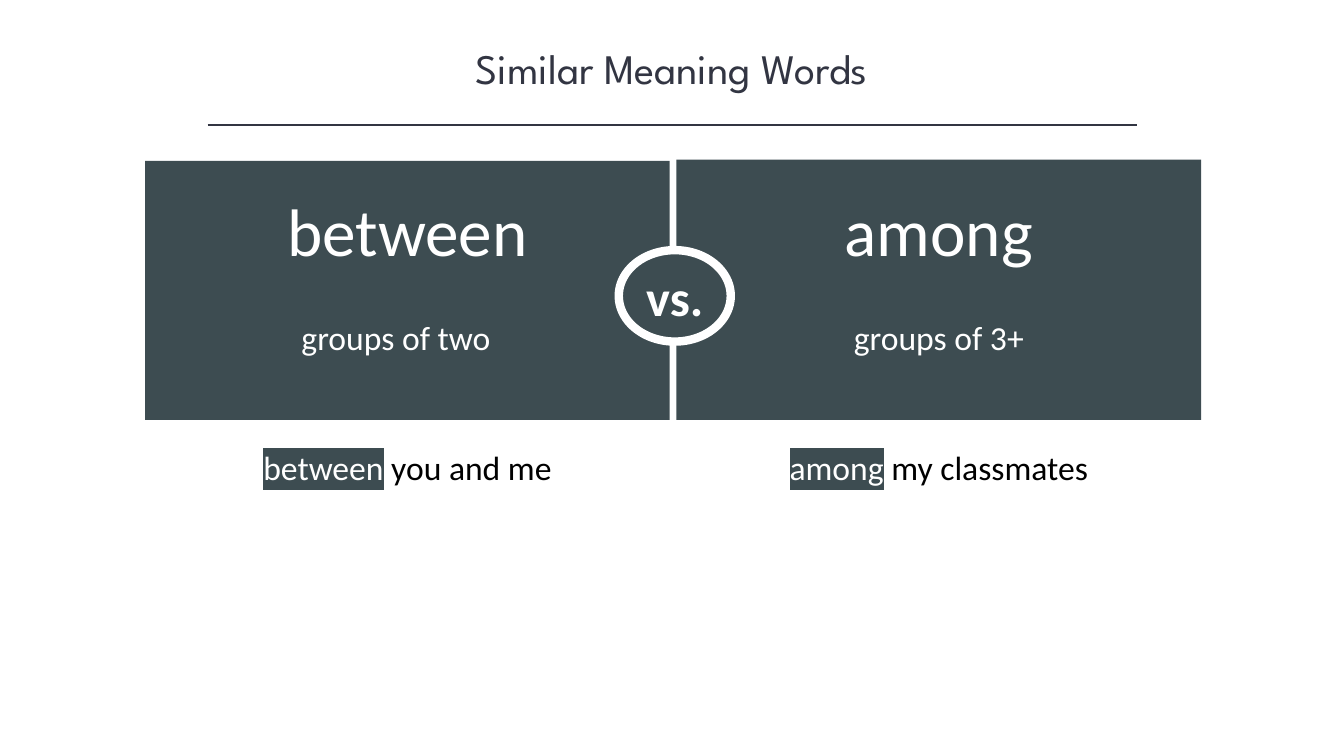
from lxml import etree
from pptx import Presentation
from pptx.dml.color import RGBColor
from pptx.enum.shapes import MSO_CONNECTOR, MSO_SHAPE
from pptx.enum.text import MSO_ANCHOR, MSO_AUTO_SIZE, PP_ALIGN
from pptx.oxml.ns import qn
from pptx.util import Pt

COLORS = {"slate": "3D4C51", "ink": "323542", "white": "FFFFFF", "black": "000000"}
BODY_FONT = "Calibri"
TITLE_FONT = "League Spartan"


def rgb(name):
    return RGBColor.from_string(COLORS[name])


def style_run(run, size, color, font=BODY_FONT, bold=False):
    run.font.size = Pt(size)
    run.font.name = font
    run.font.bold = bold
    run.font.color.rgb = rgb(color)


def highlight(run, color):
    """Mark a run that already has its font colour."""
    mark = etree.Element(qn("a:highlight"))
    etree.SubElement(mark, qn("a:srgbClr"), val=COLORS[color])
    run.font.fill  # the colour fill must precede the highlight
    run._r.rPr.find(qn("a:solidFill")).addnext(mark)


def add_label(slide, box, text, size, color="white", anchor=MSO_ANCHOR.TOP):
    """Add one centred line of text and return its paragraph."""
    label = slide.shapes.add_textbox(*map(Pt, box)).text_frame
    label.word_wrap = True
    label.vertical_anchor = anchor
    line = label.paragraphs[0]
    line.text = text
    line.alignment = PP_ALIGN.CENTER
    style_run(line.runs[0], size, color)
    return line


def add_block(slide, preset, box):
    block = slide.shapes.add_shape(preset, *map(Pt, box))
    block.shadow.inherit = False
    block.fill.solid()
    block.fill.fore_color.rgb = rgb("slate")
    block.line.fill.background()
    return block


def add_heading(slide, box, text):
    """Set the title with a thin rule beneath it."""
    left, top, width, height = box
    title = slide.shapes.title
    title.left, title.top, title.width, title.height = map(Pt, box)
    frame = title.text_frame
    frame.text = text
    frame.auto_size = MSO_AUTO_SIZE.NONE
    frame.vertical_anchor = MSO_ANCHOR.TOP
    frame.paragraphs[0].alignment = PP_ALIGN.CENTER
    style_run(frame.paragraphs[0].runs[0], 30, "ink", TITLE_FONT)

    rule_y = top + 62.7
    rule = slide.shapes.add_connector(
        MSO_CONNECTOR.STRAIGHT,
        Pt(left + 28.3), Pt(rule_y), Pt(left + width - 27.8), Pt(rule_y))
    rule.line.color.rgb = rgb("ink")
    rule.line.width = Pt(1)
    etree.SubElement(rule._element.spPr, qn("a:effectLst"))


def add_word_panel(slide, box, word, meaning, example_rest, meaning_shift=0):
    """Add a panel with a word and its meaning, and an example below it."""
    left, top, width, height = box
    bottom = top + height
    add_block(slide, MSO_SHAPE.RECTANGLE, box)
    add_label(slide, (left, bottom - 168, width, 65.5), word, 48)
    add_label(slide, (left + meaning_shift, bottom - 77.2, width, 36),
              meaning, 24, anchor=MSO_ANCHOR.MIDDLE)

    example = add_label(slide, (left, bottom + 15.7, width, 36), word, 24)
    highlight(example.runs[0], "slate")
    rest = example.add_run()
    rest.text = example_rest
    style_run(rest, 24, "black")


def add_versus_badge(slide, box):
    badge = add_block(slide, MSO_SHAPE.OVAL, box)
    badge.line.color.rgb = rgb("white")
    badge.line.width = Pt(6)
    frame = badge.text_frame
    frame.text = "vs."
    frame.word_wrap = False
    frame.vertical_anchor = MSO_ANCHOR.MIDDLE
    frame.paragraphs[0].alignment = PP_ALIGN.CENTER
    style_run(frame.paragraphs[0].runs[0], 36, "white", bold=True)


def main():
    deck = Presentation()
    deck.slide_width, deck.slide_height = Pt(960), Pt(540)
    slide = deck.slides.add_slide(deck.slide_layouts[5])
    add_heading(slide, (120, 26.6, 720, 44), "Similar Meaning Words")
    add_word_panel(slide, (103.7, 115, 374.7, 185),
                   "between", "groups of two", " you and me", meaning_shift=-8.3)
    add_word_panel(slide, (483.2, 114, 374.7, 186),
                   "among", "groups of 3+", " my classmates")
    add_versus_badge(slide, (442, 178.7, 80, 65.3))
    deck.save("out.pptx")


if __name__ == "__main__":
    main()
